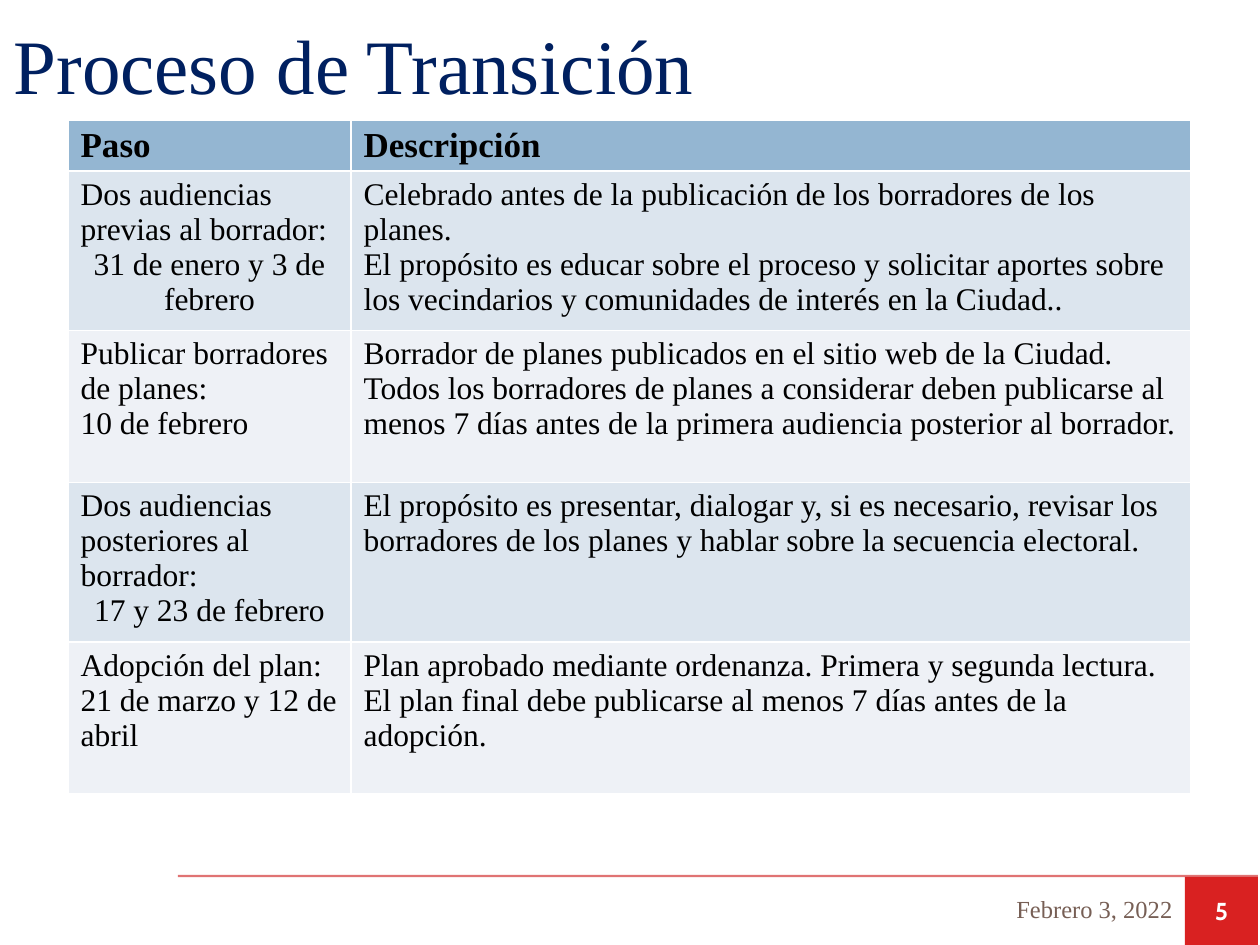
from pptx import Presentation, util as u
from pptx.dml.color import RGBColor
from pptx.enum import shapes, text
from pptx.oxml import parse_xml
from pptx.oxml.ns import nsdecls
from lxml import etree

# Content: a cell is a list of (text, alignment) paragraphs
LEFT, MID, RIGHT = text.PP_ALIGN.LEFT, text.PP_ALIGN.CENTER, text.PP_ALIGN.RIGHT
TITLE = "Proceso de Transición"
DATE = "Febrero 3, 2022"
PAGE = "5"
HEADS = ["Paso", "Descripción"]
STEPS = [
    ([("Dos audiencias previas al borrador:", LEFT),
      ("31 de enero y 3 de febrero", MID)],
     [("Celebrado antes de la publicación de los borradores de los planes.", LEFT),
      ("El propósito es educar sobre el proceso y solicitar aportes sobre los "
       "vecindarios y comunidades de interés en la Ciudad..", LEFT)]),
    ([("Publicar borradores de planes:", LEFT), ("10 de febrero", LEFT)],
     [("Borrador de planes publicados en el sitio web de la Ciudad. Todos los "
       "borradores de planes a considerar deben publicarse al menos 7 días antes "
       "de la primera audiencia posterior al borrador.", LEFT)]),
    ([("Dos audiencias posteriores al borrador:", LEFT),
      ("17 y 23 de febrero", MID)],
     [("El propósito es presentar, dialogar y, si es necesario, revisar los "
       "borradores de los planes y hablar sobre la secuencia electoral.", LEFT)]),
    ([("Adopción del plan:", LEFT), ("21 de marzo y 12 de abril", LEFT)],
     [("Plan aprobado mediante ordenanza. Primera y segunda lectura.", LEFT),
      ("El plan final debe publicarse al menos 7 días antes de la adopción.", LEFT)]),
]

# Look
HEX = {"navy": "002060", "head": "94B6D2", "odd": "DCE5EE", "even": "EEF1F6",
       "rule": "C80000", "red": "D92121", "brown": "775F55",
       "black": "000000", "white": "FFFFFF"}
SERIF, SANS = "Times New Roman", "Cabin"
COLS = [283, 840]
HEAD_H, ROW_H = 51, 152


def px(n):
    return u.Emu(n * 914400 // 126)


def box(*sides):
    return [px(n) for n in sides]


def rgb(name):
    return RGBColor.from_string(HEX[name])


def write(frame, paras, size, color, face=SERIF, bold=False):
    frame.word_wrap = True
    for i, (words, align) in enumerate(paras):
        para = frame.paragraphs[0] if i == 0 else frame.add_paragraph()
        para.text = words
        para.alignment = align
        font = para.font
        font.name, font.size, font.bold = face, u.Pt(size), bold
        font.color.rgb = rgb(color)


def style(cell, row, paras):
    head = row == 0
    cell.margin_bottom = px(2)
    cell.fill.solid()
    cell.fill.fore_color.rgb = rgb("head" if head else "odd" if row % 2 else "even")
    write(cell.text_frame, paras, 20 if head else 18, "black", bold=head)


deck = Presentation()
deck.slide_width, deck.slide_height = px(1260), px(945)
slide = deck.slides.add_slide(deck.slide_layouts[5])
items = slide.shapes

# Footer rule
rule = items.add_connector(shapes.MSO_CONNECTOR.STRAIGHT, *box(178, 876, 1258, 876))
rule.line.width = u.Pt(1.25)
rule.line.color.rgb = rgb("rule")
tint = rule.line._ln.find(".//{*}srgbClr")
etree.SubElement(tint, tint.tag.replace("srgbClr", "alpha"), val="55000")
rule._element.spPr.append(parse_xml(f'<a:effectLst {nsdecls("a")}/>'))

# Page number
page = items.add_shape(shapes.MSO_SHAPE.RECTANGLE, *box(1185, 877, 73, 68))
page.shadow.inherit = False
page.fill.solid()
page.fill.fore_color.rgb = rgb("red")
page.line.fill.background()
page.text_frame.vertical_anchor = text.MSO_ANCHOR.MIDDLE
write(page.text_frame, [(PAGE, MID)], 14, "white", SANS, True)

# Title
title = items.title
title.left, title.top, title.width, title.height = box(1, 0, 1258, 128)
title.text_frame.vertical_anchor = text.MSO_ANCHOR.MIDDLE
write(title.text_frame, [(TITLE, LEFT)], 44, "navy")

# Date
date = items.add_textbox(*box(817, 884, 368, 50))
date.text_frame.vertical_anchor = text.MSO_ANCHOR.MIDDLE
write(date.text_frame, [(DATE, RIGHT)], 14, "brown")

# Table of steps: the default table style draws the white borders
rows = [[[(head, LEFT)] for head in HEADS]] + STEPS
high = HEAD_H + ROW_H * len(STEPS)
table = items.add_table(len(rows), len(COLS), *box(68, 120, sum(COLS), high)).table
for col, wide in zip(table.columns, COLS):
    col.width = px(wide)
for r, cells in enumerate(rows):
    table.rows[r].height = px(ROW_H if r else HEAD_H)
    for c, paras in enumerate(cells):
        style(table.cell(r, c), r, paras)

deck.save("out.pptx")
